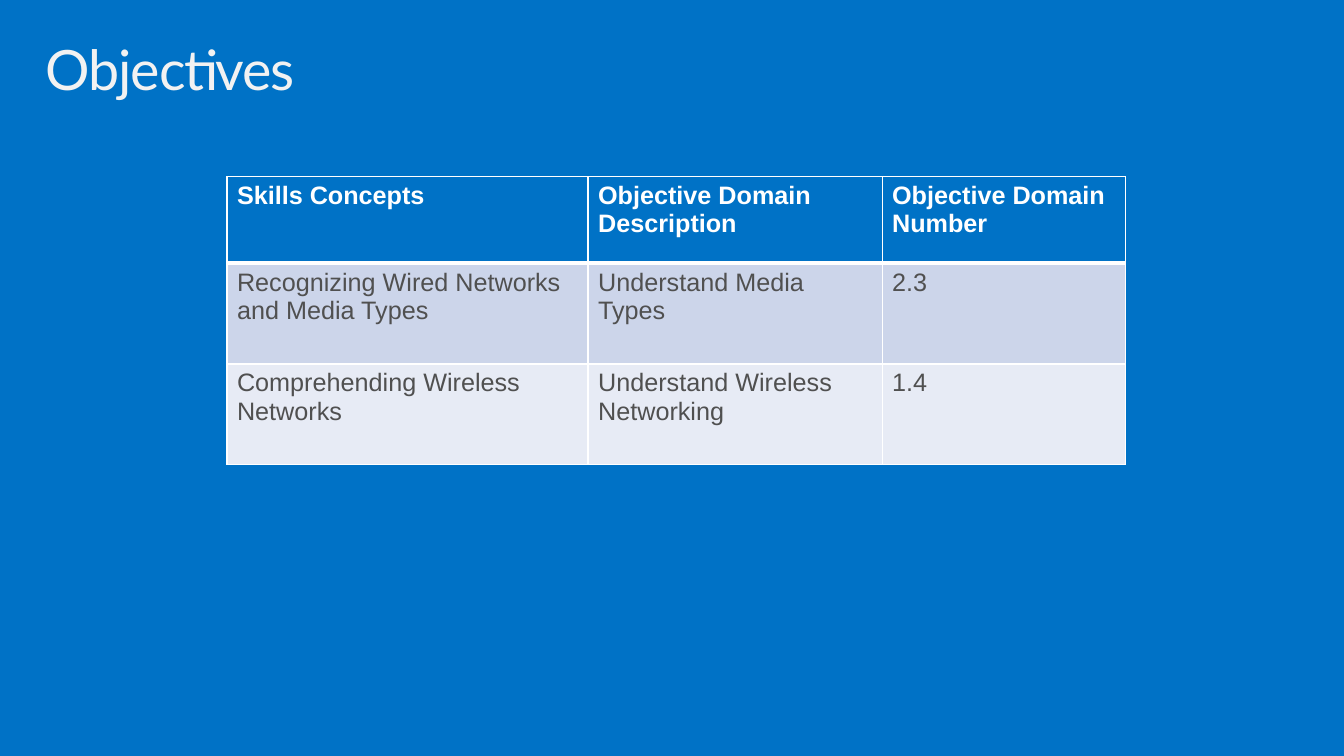
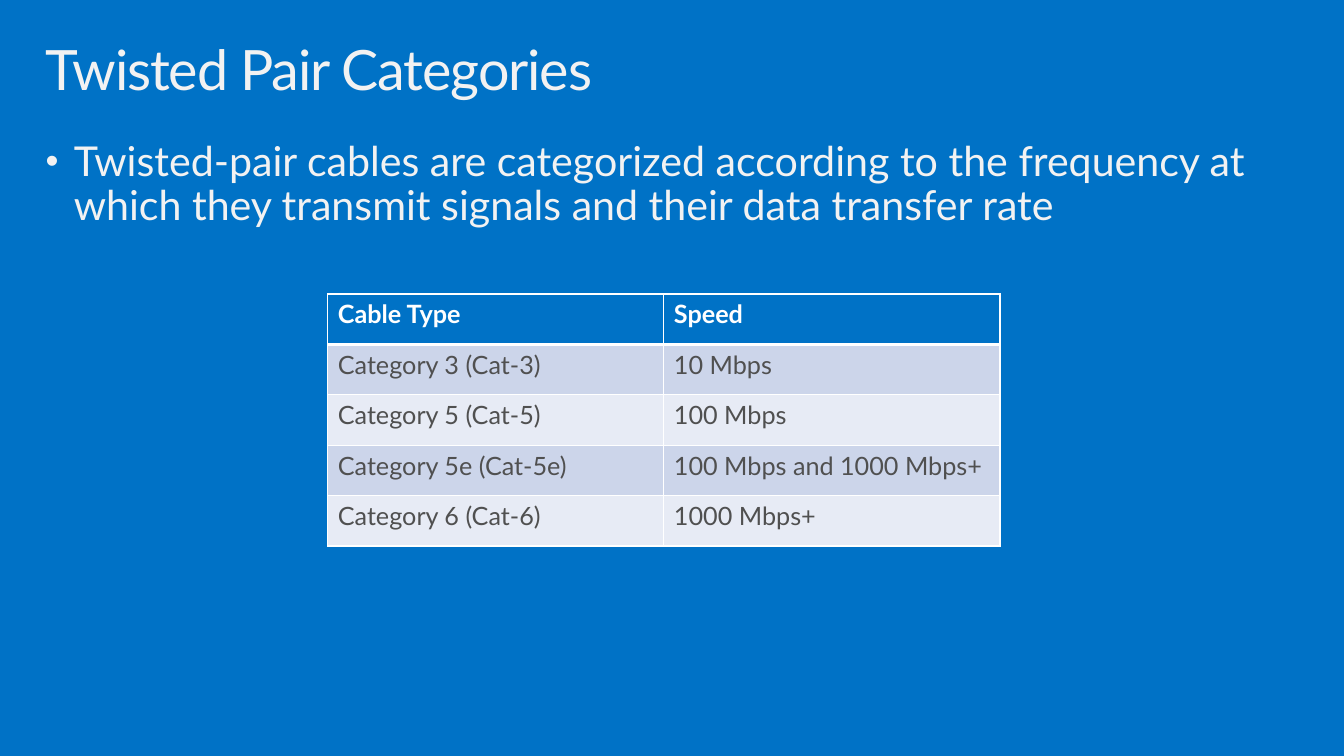
from pptx import Presentation
from pptx.dml.color import RGBColor
from pptx.oxml.ns import qn
from pptx.util import Cm, Pt
from lxml.etree import SubElement

BLUE = RGBColor(0x00, 0x72, 0xC6)
WHITE = RGBColor(0xFF, 0xFF, 0xFF)
PALE = RGBColor(0xF2, 0xF2, 0xF2)
GREY = RGBColor(0x50, 0x50, 0x50)
BANDS = (RGBColor(0xCC, 0xD5, 0xEA), RGBColor(0xE7, 0xEB, 0xF5))

TEXT_LEFT, TEXT_WIDTH = 0.74, 32.28
BULLET_INDENT = Cm(0.71)
THIN, THICK = Pt(1), Pt(3)

OBJECTIVES = [
    ("Skills Concepts", "Objective Domain Description", "Objective Domain Number"),
    ("Recognizing Wired Networks and Media Types", "Understand Media Types", "2.3"),
    ("Comprehending Wireless Networks", "Understand Wireless Networking", "1.4"),
]
CABLE_SPEEDS = [
    ("Cable Type", "Speed"),
    ("Category 3 (Cat-3)", "10 Mbps"),
    ("Category 5 (Cat-5)", "100 Mbps"),
    ("Category 5e (Cat-5e)", "100 Mbps and 1000 Mbps+"),
    ("Category 6 (Cat-6)", "1000 Mbps+"),
]


def add_span(para, text, size, color, font="Lato", bold=False):
    span = para.add_run()
    span.text = text
    span.font.size = Pt(size)
    span.font.name = font
    span.font.bold = bold
    span.font.color.rgb = color
    return span


def add_text(page, text, top, height, size):
    box = page.shapes.add_textbox(Cm(TEXT_LEFT), Cm(top), Cm(TEXT_WIDTH), Cm(height))
    frame = box.text_frame
    frame.word_wrap = True
    frame.margin_left = frame.margin_right = Cm(0.41)
    frame.margin_top = frame.margin_bottom = Cm(0.25)
    para = frame.paragraphs[0]
    para.line_spacing = 0.9
    return para, add_span(para, text, size, PALE)


def add_title(page, text):
    span = add_text(page, text, 0.81, 2.49, 39.7)[1]
    span.font._element.set("spc", "-80")


def add_bullet(page, text):
    para = add_text(page, text, 3.3, 2.77, 29.4)[0]
    properties = para._p.get_or_add_pPr()
    properties.set("marL", str(BULLET_INDENT))
    properties.set("indent", str(-BULLET_INDENT))
    SubElement(properties, qn("a:buSzPct"), val="90000")
    SubElement(properties, qn("a:buFont"), typeface="Arial")
    SubElement(properties, qn("a:buChar"), char="•")


def add_border(cell, side, width):
    line = SubElement(cell._tc.get_or_add_tcPr(), qn(f"a:ln{side}"), w=str(width))
    fill = SubElement(line, qn("a:solidFill"))
    SubElement(fill, qn("a:srgbClr"), val=str(WHITE))


def style_cell(cell, row_index, text, font):
    header = row_index == 0
    widths = {
        "L": THIN,
        "R": THIN,
        "T": THICK if row_index == 1 else THIN,
        "B": THICK if header else THIN,
    }
    for side, width in widths.items():
        add_border(cell, side, width)
    cell.fill.solid()
    cell.fill.fore_color.rgb = BLUE if header else BANDS[(row_index - 1) % 2]
    para = cell.text_frame.paragraphs[0]
    add_span(para, text, 18, WHITE if header else GREY, font, header)


def add_grid(page, rows, left, top, widths, heights, font):
    frame = page.shapes.add_table(
        len(rows), len(widths), Cm(left), Cm(top), Cm(sum(widths)), Cm(sum(heights))
    )
    table = frame.table
    for column, width in zip(table.columns, widths):
        column.width = Cm(width)
    for row_index, (texts, height) in enumerate(zip(rows, heights)):
        table.rows[row_index].height = Cm(height)
        for column_index, text in enumerate(texts):
            style_cell(table.cell(row_index, column_index), row_index, text, font)


def add_page(deck, title):
    page = deck.slides.add_slide(deck.slide_layouts[6])
    add_title(page, title)
    return page


def main():
    deck = Presentation()
    deck.slide_width, deck.slide_height = Cm(33.87), Cm(19.05)
    background = deck.slide_master.background.fill
    background.solid()
    background.fore_color.rgb = BLUE

    page = add_page(deck, "Objectives")
    add_grid(page, OBJECTIVES, 5.72, 4.45, (9.1, 7.41, 6.14), (2.18, 2.54, 2.54), "Arial")

    page = add_page(deck, "Twisted Pair Categories")
    add_bullet(
        page,
        "Twisted-pair cables are categorized according to the frequency at "
        "which they transmit signals and their data transfer rate",
    )
    add_grid(page, CABLE_SPEEDS, 8.26, 7.41, [8.47] * 2, [1.27] * len(CABLE_SPEEDS), "Lato")

    deck.save("out.pptx")


if __name__ == "__main__":
    main()
